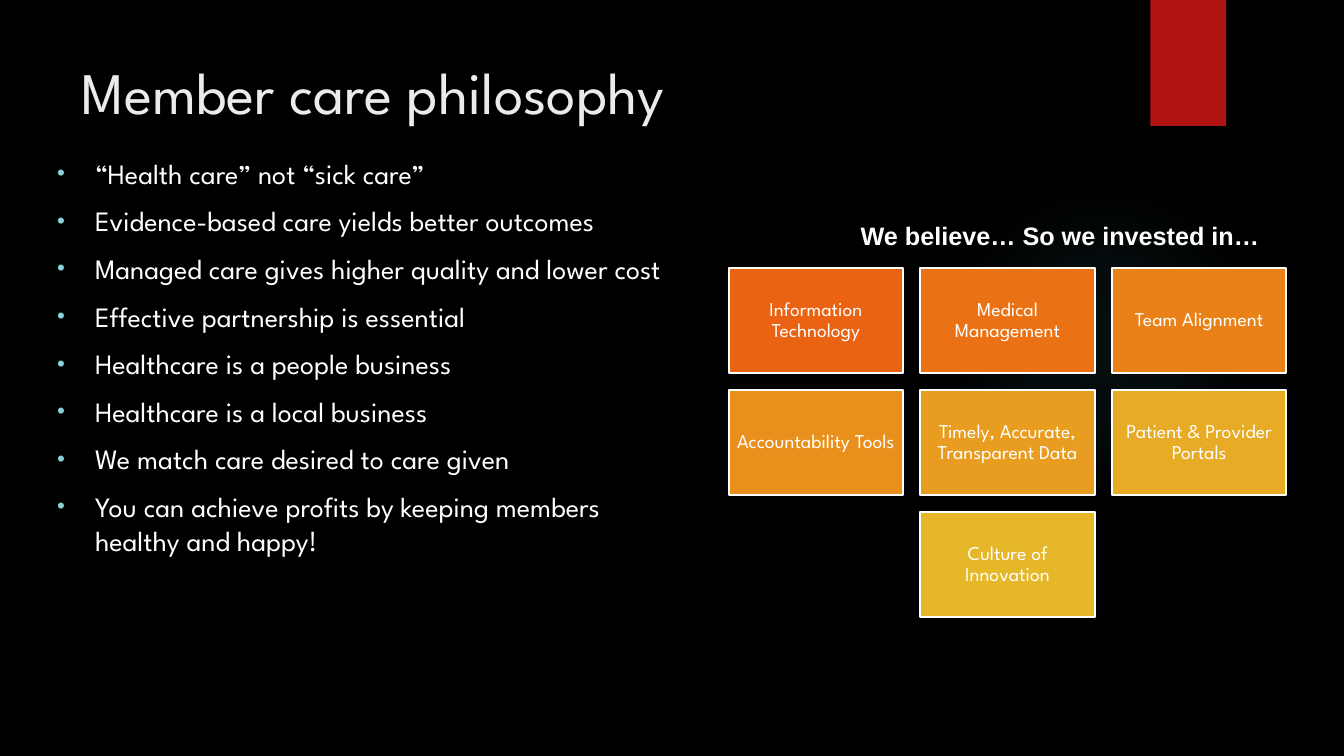
"""Build the member care philosophy slide."""
import pptx
import pptx.dml.color
import pptx.enum.shapes
import pptx.enum.text
import pptx.oxml
import pptx.oxml.ns
import pptx.util

Pt = pptx.util.Pt
RGBColor = pptx.dml.color.RGBColor
Shape = pptx.enum.shapes.MSO_SHAPE
Align = pptx.enum.text.PP_ALIGN
Anchor = pptx.enum.text.MSO_ANCHOR

BLACK = RGBColor(0x00, 0x00, 0x00)
WHITE = RGBColor(0xFF, 0xFF, 0xFF)
PALE = RGBColor(0xEB, 0xEB, 0xEB)
RED = RGBColor(0xB0, 0x15, 0x13)
AQUA = RGBColor(0x8A, 0xD0, 0xD6)
TEAL = RGBColor(0x50, 0xB9, 0xC1)

TITLE = "Member care philosophy"
HEADING = "We believe… So we invested in…"
BELIEFS = [
    "“Health care” not “sick care”",
    "Evidence-based care yields better outcomes",
    "Managed care gives higher quality and lower cost",
    "Effective partnership is essential",
    "Healthcare is a people business",
    "Healthcare is a local business",
    "We match care desired to care given",
    "You can achieve profits by keeping members healthy and happy!",
]
INVESTMENTS = [
    ("Information Technology", RGBColor(0xEA, 0x63, 0x12)),
    ("Medical Management", RGBColor(0xEB, 0x72, 0x14)),
    ("Team Alignment", RGBColor(0xEA, 0x81, 0x18)),
    ("Accountability Tools", RGBColor(0xE9, 0x90, 0x1C)),
    ("Timely, Accurate, Transparent Data", RGBColor(0xE8, 0x9D, 0x21)),
    ("Patient & Provider Portals", RGBColor(0xE7, 0xAB, 0x25)),
    ("Culture of Innovation", RGBColor(0xE6, 0xB7, 0x29)),
]
GLOW_STOPS = [(0, 7), (36, 6), (69, 0)]

COLUMNS = 3
GRID_LEFT, GRID_TOP = 520.5, 191.5
CARD_WIDTH, CARD_HEIGHT = 124.6, 74.8
STEP_X, STEP_Y = 136.9, 87.2
NAMESPACE = pptx.oxml.ns.nsdecls("a")


def add_bullet(para):
    """Give a paragraph a hanging coloured bullet."""
    properties = para._p.get_or_add_pPr()
    properties.set("marL", str(Pt(27)))
    properties.set("indent", str(Pt(-27)))
    for markup in (
        f'<a:buClr {NAMESPACE}><a:srgbClr val="{AQUA}"/></a:buClr>',
        f'<a:buSzPct {NAMESPACE} val="80000"/>',
        f'<a:buFont {NAMESPACE} typeface="Arial"/>',
        f'<a:buChar {NAMESPACE} char="•"/>',
    ):
        properties.append(pptx.oxml.parse_xml(markup))


def write(box, lines, size, font="League Spartan", color=WHITE, bold=False,
          align=Align.LEFT, anchor=Anchor.TOP, inset=None, bullet=False,
          before=0, spacing=1.0):
    """Fill a shape with formatted paragraphs."""
    frame = box.text_frame
    frame.word_wrap = True
    frame.auto_size = pptx.enum.text.MSO_AUTO_SIZE.NONE
    frame.vertical_anchor = anchor
    if inset is not None:
        frame.margin_left = frame.margin_right = Pt(inset)
        frame.margin_top = frame.margin_bottom = Pt(inset)
    for index, line in enumerate(lines):
        para = frame.add_paragraph() if index else frame.paragraphs[0]
        para.alignment = align
        para.line_spacing = spacing
        para.space_before = Pt(before if index else 0)
        if bullet:
            add_bullet(para)
        span = para.add_run()
        span.text = line
        span.font.size = Pt(size)
        span.font.name = font
        span.font.bold = bold
        span.font.color.rgb = color


def add_block(page, kind, left, top, width, height, fill=None, line=None):
    """Add a flat shape with an optional fill and outline."""
    block = page.shapes.add_shape(kind, Pt(left), Pt(top), Pt(width), Pt(height))
    block.shadow.inherit = False
    if fill is None:
        block.fill.background()
    else:
        block.fill.solid()
        block.fill.fore_color.rgb = fill
    if line is None:
        block.line.fill.background()
    else:
        block.line.color.rgb = line
        block.line.width = Pt(1.5)
    return block


def add_glow(page):
    """Add the faint radial glow behind the cards."""
    glow = add_block(page, Shape.OVAL, 677.5, 131.8, 221.8, 221.8)
    stops = "".join(
        f'<a:gs pos="{position * 1000}"><a:srgbClr val="{TEAL}">'
        f'<a:alpha val="{alpha * 1000}"/></a:srgbClr></a:gs>'
        for position, alpha in GLOW_STOPS
    )
    gradient = pptx.oxml.parse_xml(
        f'<a:gradFill {NAMESPACE}><a:gsLst>{stops}</a:gsLst><a:path path="circle">'
        '<a:fillToRect l="50000" t="50000" r="50000" b="50000"/></a:path></a:gradFill>'
    )
    properties = glow._element.spPr
    properties.replace(properties.find(pptx.oxml.ns.qn("a:noFill")), gradient)


def add_cards(page):
    """Lay the investments out in rows, centring a short last row."""
    for index, (label, color) in enumerate(INVESTMENTS):
        row, column = divmod(index, COLUMNS)
        in_row = min(COLUMNS, len(INVESTMENTS) - row * COLUMNS)
        left = GRID_LEFT + (column + (COLUMNS - in_row) / 2) * STEP_X
        card = add_block(page, Shape.RECTANGLE, left, GRID_TOP + row * STEP_Y,
                         CARD_WIDTH, CARD_HEIGHT, fill=color, line=WHITE)
        write(card, [label], 14, align=Align.CENTER, anchor=Anchor.MIDDLE,
              inset=4.2, spacing=0.9)


def main():
    """Create the deck and save it."""
    deck = pptx.Presentation()
    deck.slide_width, deck.slide_height = Pt(960), Pt(540)
    page = deck.slides.add_slide(deck.slide_layouts[5])
    page.background.fill.solid()
    page.background.fill.fore_color.rgb = BLACK

    add_glow(page)
    add_block(page, Shape.RECTANGLE, 821.8, 0, 54, 90, fill=RED)

    title = page.shapes.title
    title.left, title.top, title.width, title.height = Pt(51), Pt(36), Pt(741), Pt(110)
    write(title, [TITLE], 42, color=PALE)

    beliefs = page.shapes.add_textbox(Pt(33.8), Pt(108), Pt(446.4), Pt(376.6))
    write(beliefs, BELIEFS, 20, bullet=True, before=10)

    heading = page.shapes.add_textbox(Pt(607.7), Pt(154), Pt(310.3), Pt(29))
    write(heading, [HEADING], 18, font="Arial", bold=True)

    add_cards(page)
    deck.save("out.pptx")


if __name__ == "__main__":
    main()
